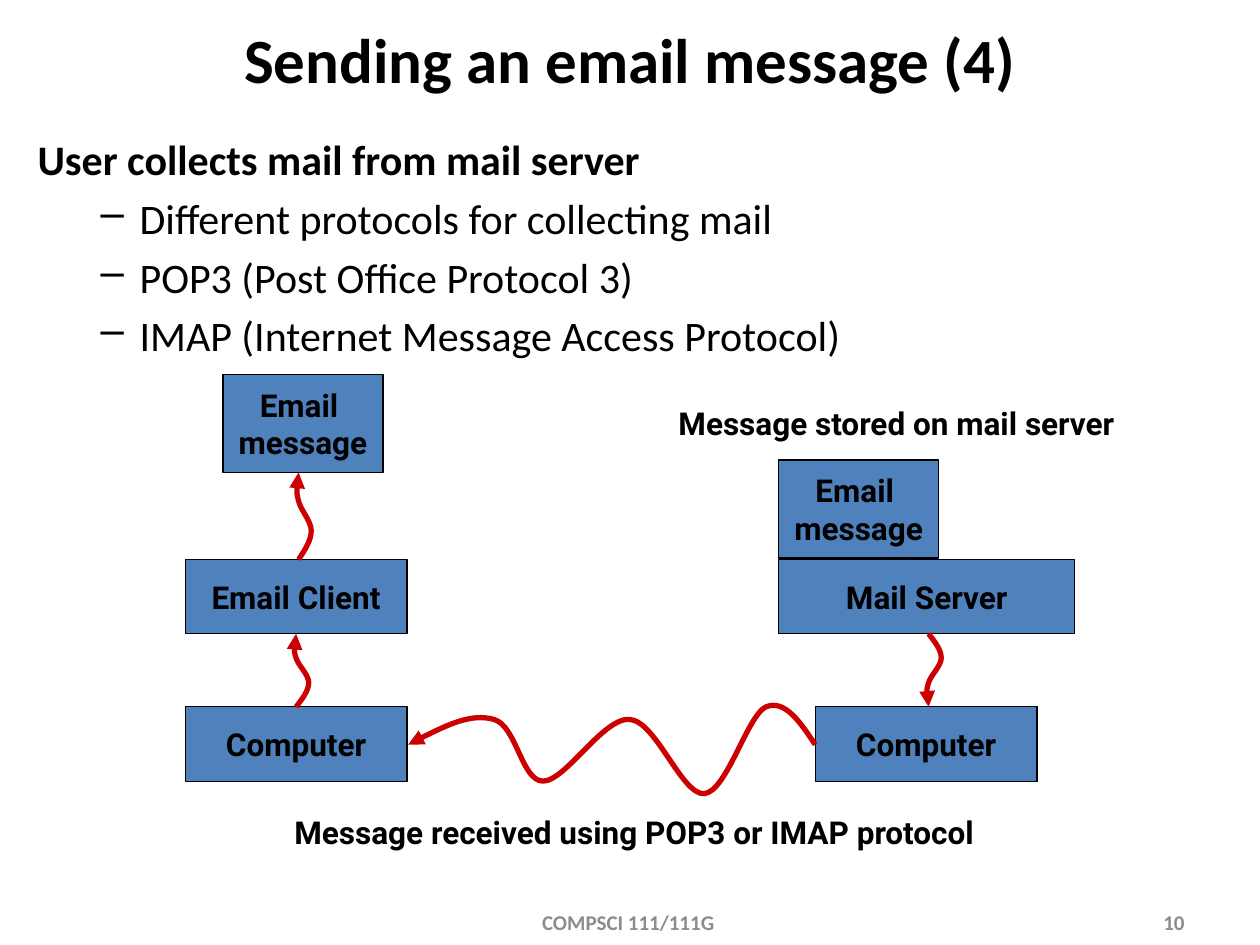
from dataclasses import dataclass

from lxml import etree
from pptx import Presentation
from pptx.dml.color import RGBColor
from pptx.enum import shapes, text
from pptx.oxml import ns
from pptx.util import Inches, Pt


@dataclass(frozen=True)
class Theme:
    ink = RGBColor(0x00, 0x00, 0x00)
    node_fill = RGBColor(0x4F, 0x81, 0xBD)
    flow = RGBColor(0xCC, 0x00, 0x00)
    footer = RGBColor(0x8C, 0x8C, 0x8C)
    prose_face = "Calibri"
    diagram_face = "Roboto"
    title_size = Pt(36)
    body_size = Pt(24)
    diagram_size = Pt(18)
    footer_size = Pt(12)
    node_line = Pt(0.75)
    flow_line = Pt(3)


THEME = Theme()
CENTER = text.PP_ALIGN.CENTER
MIDDLE = text.MSO_ANCHOR.MIDDLE

# Sideways offset in inches and share of the length, for each curve point
RIPPLE = [(0, 0), (0.05, 0.11), (0.1, 0.22), (0.1, 0.33), (0.1, 0.44),
          (0.02, 0.56), (0, 0.67), (-0.02, 0.78), (-0.01, 0.89), (0, 1)]
NETWORK_WAVE = [
    (6.47, 5.91), (6.35, 5.73), (6.23, 5.55), (6.08, 5.61),
    (5.93, 5.68), (5.77, 6.28), (5.59, 6.3),
    (5.41, 6.31), (5.21, 5.73), (5, 5.71),
    (4.79, 5.69), (4.49, 6.2), (4.31, 6.2),
    (4.14, 6.2), (4.1, 5.76), (3.92, 5.71),
    (3.74, 5.66), (3.49, 5.78), (3.24, 5.91)]


def style(paragraph, face, size, color=THEME.ink, bold=True, align=None):
    font = paragraph.font
    font.name, font.size, font.bold = face, size, bold
    font.color.rgb = color
    paragraph.alignment = align


def add_text(slide, box, wording, face, size, color=THEME.ink,
             align=CENTER, anchor=MIDDLE):
    frame = slide.shapes.add_textbox(*map(Inches, box)).text_frame
    frame.word_wrap = True
    frame.vertical_anchor = anchor
    frame.paragraphs[0].text = wording
    style(frame.paragraphs[0], face, size, color, align=align)
    return frame


def add_bullet(frame, wording):
    bullet = frame.add_paragraph()
    bullet.text = wording
    bullet.level = 1
    bullet.space_before = Pt(4.8)
    style(bullet, THEME.prose_face, THEME.body_size, bold=False)
    properties = bullet._p.get_or_add_pPr()
    properties.set("marL", str(Inches(0.81)))
    properties.set("indent", str(Inches(-0.31)))
    dash = etree.Element(ns.qn("a:buChar"), char="–")
    properties.find(ns.qn("a:spcBef")).addnext(dash)


def add_caption(slide, box, wording):
    frame = add_text(slide, box, wording, THEME.diagram_face,
                     THEME.diagram_size, anchor=text.MSO_ANCHOR.TOP)
    frame.word_wrap = False
    frame.auto_size = text.MSO_AUTO_SIZE.SHAPE_TO_FIT_TEXT


def add_node(slide, left, top, width, height, wording):
    node = slide.shapes.add_shape(
        shapes.MSO_SHAPE.RECTANGLE, *map(Inches, (left, top, width, height)))
    node.shadow.inherit = False
    node.fill.solid()
    node.fill.fore_color.rgb = THEME.node_fill
    node.line.color.rgb = THEME.ink
    node.line.width = THEME.node_line
    frame = node.text_frame
    frame.word_wrap = False
    frame.vertical_anchor = MIDDLE
    frame.paragraphs[0].text = wording
    style(frame.paragraphs[0], THEME.diagram_face, THEME.diagram_size,
          align=CENTER)


def add_flow(slide, points):
    """Draw an arrow through cubic Bezier points: a start, then triples."""
    start, *rest = [(Inches(x), Inches(y)) for x, y in points]
    builder = slide.shapes.build_freeform(*start)
    builder.add_line_segments(rest, close=False)
    flow = builder.convert_to_shape()
    flow.shadow.inherit = False
    flow.fill.background()
    flow.line.color.rgb = THEME.flow
    flow.line.width = THEME.flow_line
    etree.SubElement(flow.line._get_or_add_ln(), ns.qn("a:tailEnd"),
                     type="triangle")

    outline = flow._element.find(".//" + ns.qn("a:path"))
    steps = outline.findall(ns.qn("a:lnTo"))
    for first in range(0, len(steps), 3):
        curve = etree.SubElement(outline, ns.qn("a:cubicBezTo"))
        for step in steps[first:first + 3]:
            curve.append(step[0])
            outline.remove(step)


def add_ripple(slide, x, start, end):
    add_flow(slide, [(x + dx, start + share * (end - start))
                     for dx, share in RIPPLE])


def add_prose(slide):
    add_text(slide, (0.1, 0.12, 9.8, 0.69), "Sending an email message (4)",
             THEME.prose_face, THEME.title_size)
    body = add_text(slide, (0.2, 1.01, 9.6, 5.98),
                    "User collects mail from mail server",
                    THEME.prose_face, THEME.body_size,
                    align=text.PP_ALIGN.LEFT, anchor=text.MSO_ANCHOR.TOP)
    body.paragraphs[0].space_before = Pt(4.8)
    for protocol_note in ("Different protocols for collecting mail",
                          "POP3 (Post Office Protocol 3)",
                          "IMAP (Internet Message Access Protocol)"):
        add_bullet(body, protocol_note)


def add_diagram(slide):
    program_top, computer_top, node_height = 4.44, 5.61, 0.59
    program_bottom = program_top + node_height
    for left, top, width, wording in (
            (1.47, program_top, 1.76, "Email Client"),
            (1.47, computer_top, 1.76, "Computer"),
            (6.18, program_top, 2.35, "Mail Server"),
            (6.47, computer_top, 1.76, "Computer")):
        add_node(slide, left, top, width, node_height, wording)
    for left, top in ((1.77, 2.97), (6.18, 3.65)):
        add_node(slide, left, top, 1.27, 0.78, "Email \nmessage")

    add_flow(slide, NETWORK_WAVE)
    add_ripple(slide, 2.35, computer_top, program_bottom)
    add_ripple(slide, 7.37, program_bottom, computer_top)
    add_ripple(slide, 2.37, program_top, 3.75)

    add_caption(slide, (2.06, 6.4, 5.95, 0.4),
                "Message received using POP3 or IMAP protocol")
    add_caption(slide, (5.17, 3.16, 3.89, 0.4),
                "Message stored on mail server")


def add_footer(slide):
    for left, width, wording, align in (
            (3.42, 3.17, "COMPSCI 111/111G ", CENTER),
            (7.17, 2.33, "10", text.PP_ALIGN.RIGHT)):
        add_text(slide, (left, 7.18, width, 0.27), wording, THEME.prose_face,
                 THEME.footer_size, THEME.footer, align)


def main():
    deck = Presentation()
    deck.slide_width, deck.slide_height = Inches(10), Inches(7.5)
    slide = deck.slides.add_slide(deck.slide_layouts[6])
    add_prose(slide)
    add_diagram(slide)
    add_footer(slide)
    deck.save("out.pptx")


if __name__ == "__main__":
    main()
